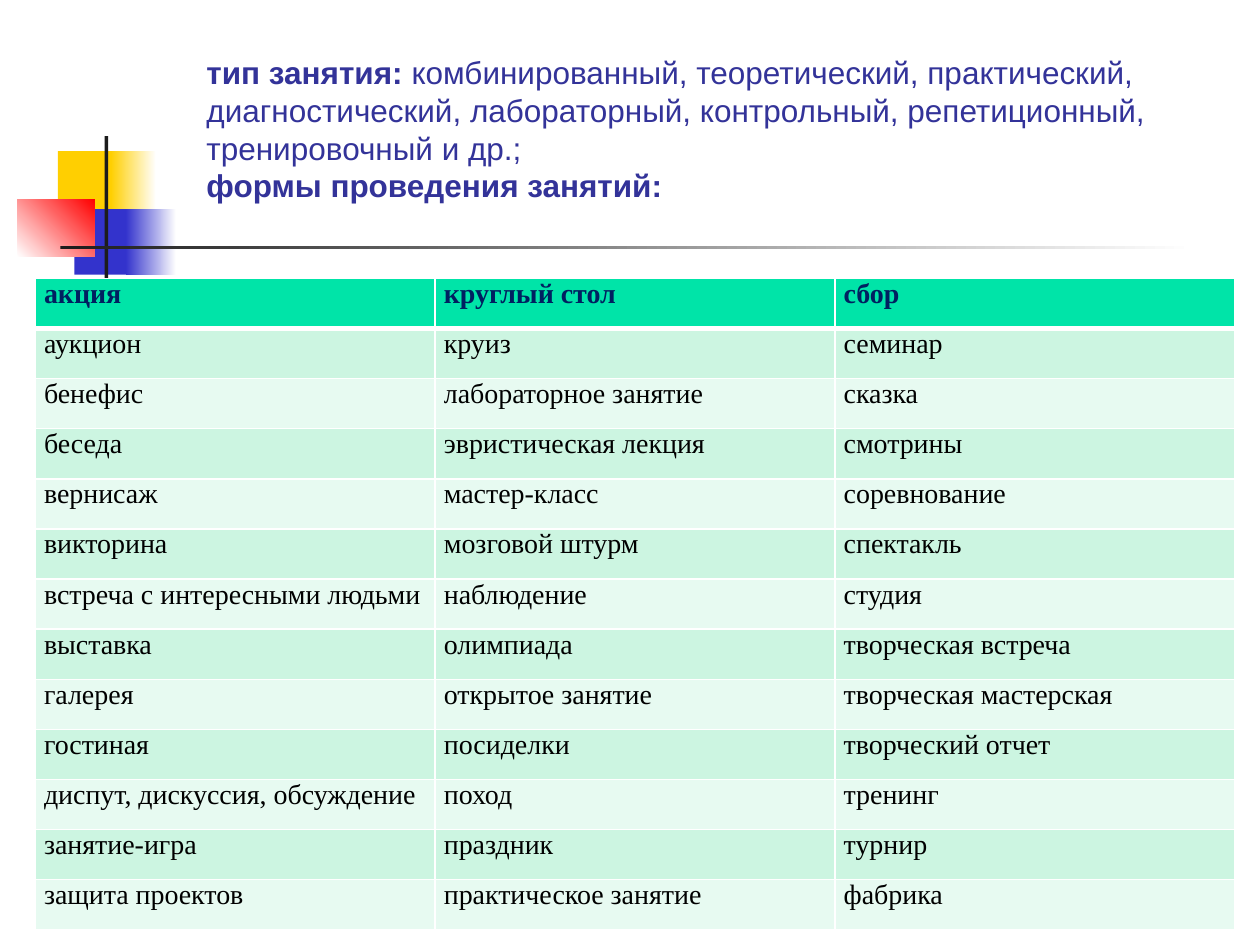
from lxml.etree import SubElement
from pptx import Presentation
from pptx.dml.color import RGBColor as RGB
from pptx.enum.shapes import MSO_SHAPE as Shape
from pptx.enum.text import MSO_ANCHOR as Anchor
from pptx.oxml.ns import qn
from pptx.util import Inches, Pt

COLORS = {
    "white": "FFFFFF", "gold": "FFCF01", "blue": "3333CC", "red": "FF0000",
    "ink": "1C1C1C", "title": "333399", "navy": "002060", "black": "000000",
    "head": "00E4A8", "odd": "CCF5E1", "even": "E7FAF1",
}

TITLE = [
    ("тип занятия: ", True),
    ("комбинированный, теоретический, практический, диагностический, "
     "лабораторный, контрольный, репетиционный, тренировочный и др.;", False),
    ("формы проведения занятий:", True),
]

FORMS = [
    ("акция", "круглый стол", "сбор"),
    ("аукцион", "круиз", "семинар"),
    ("бенефис", "лабораторное занятие", "сказка"),
    ("беседа", "эвристическая лекция", "смотрины"),
    ("вернисаж", "мастер-класс", "соревнование"),
    ("викторина", "мозговой штурм", "спектакль"),
    ("встреча с интересными людьми", "наблюдение", "студия"),
    ("выставка", "олимпиада", "творческая встреча"),
    ("галерея", "открытое занятие", "творческая мастерская"),
    ("гостиная", "посиделки", "творческий отчет"),
    ("диспут, дискуссия, обсуждение", "поход", "тренинг"),
    ("занятие-игра", "праздник", "турнир"),
    ("защита проектов", "практическое занятие", "фабрика"),
]

# Offsets within the emblem: left, top, width, height, colours, angle
BLOCKS = [
    (0.32, 0.12, 0.48, 0.52, ["gold"], 0),
    (0.74, 0.12, 0.36, 0.52, ["gold", "white"], 0),
    (0.45, 0.58, 0.46, 0.52, ["blue"], 0),
    (0.86, 0.58, 0.4, 0.52, ["blue", "white"], 0),
    (0, 0.5, 0.61, 0.46, ["white", "red"], 45),
    (0.69, 0, 0.03, 1.15, ["ink"], 0),
    (0.34, 0.87, 9, 0.03, ["ink", "white"], 0),
]


def color(name):
    return RGB.from_string(COLORS[name])


def paint(fill, names, angle):
    """Fill with one colour, or with a gradient of two."""
    if len(names) == 1:
        fill.solid()
        fill.fore_color.rgb = color(names[0])
        return
    fill.gradient()
    fill.gradient_angle = angle
    for stop, name in zip(fill.gradient_stops, names):
        stop.color.rgb = color(name)


def add_emblem(slide, left, top):
    for x, y, width, height, names, angle in BLOCKS:
        block = slide.shapes.add_shape(
            Shape.RECTANGLE, Inches(left + x), Inches(top + y),
            Inches(width), Inches(height))
        block.shadow.inherit = False
        block.line.fill.background()
        paint(block.fill, names, angle)


def add_title(slide, left, top, width, height):
    box = slide.shapes.add_textbox(
        Inches(left), Inches(top), Inches(width), Inches(height))
    frame = box.text_frame
    frame.word_wrap = True
    frame.vertical_anchor = Anchor.BOTTOM
    para = frame.paragraphs[0]
    font = para.font
    font.name, font.size = "Arial", Pt(18)
    font.color.rgb = color("title")
    for index, (text, bold) in enumerate(TITLE):
        if index == 2:
            para.add_line_break()
        run = para.add_run()
        run.text = text
        run.font.bold = bold


def add_borders(cell, widths):
    """Draw white edges; widths are points by side: L, R, T, B."""
    props = cell._tc.get_or_add_tcPr()
    for index, (side, width) in enumerate(widths.items()):
        line = SubElement(props, qn(f"a:ln{side}"), w=str(Pt(width)))
        fill = SubElement(line, qn("a:solidFill"))
        SubElement(fill, qn("a:srgbClr"), val=COLORS["white"])
        props.insert(index, line)


def fill_cell(cell, text, row):
    head = row == 0
    cell.margin_left = cell.margin_right = Inches(0.07)
    cell.margin_top = cell.margin_bottom = 0
    cell.text = text
    font = cell.text_frame.paragraphs[0].font
    font.name, font.size, font.bold = "Times New Roman", Pt(16), head
    font.color.rgb = color("navy" if head else "black")
    cell.fill.solid()
    cell.fill.fore_color.rgb = color(
        "head" if head else "odd" if row % 2 else "even")
    add_borders(cell, {"L": 1, "R": 1, "T": 3 if row == 1 else 1,
                       "B": 3 if head else 1})


def add_forms(slide, left, top, width, height):
    table = slide.shapes.add_table(
        len(FORMS), len(FORMS[0]), Inches(left), Inches(top),
        Inches(width), Inches(height)).table
    for row, texts in enumerate(FORMS):
        for col, text in enumerate(texts):
            fill_cell(table.cell(row, col), text, row)


def main():
    deck = Presentation()
    deck.slide_width, deck.slide_height = Inches(10), Inches(7.5)
    slide = deck.slides.add_slide(deck.slide_layouts[6])
    add_emblem(slide, 0.14, 1.08)
    add_title(slide, 1.54, 0.36, 7.68, 1.31)
    add_forms(slide, 0.28, 2.21, 9.52, 5.17)
    deck.save("out.pptx")


if __name__ == "__main__":
    main()
